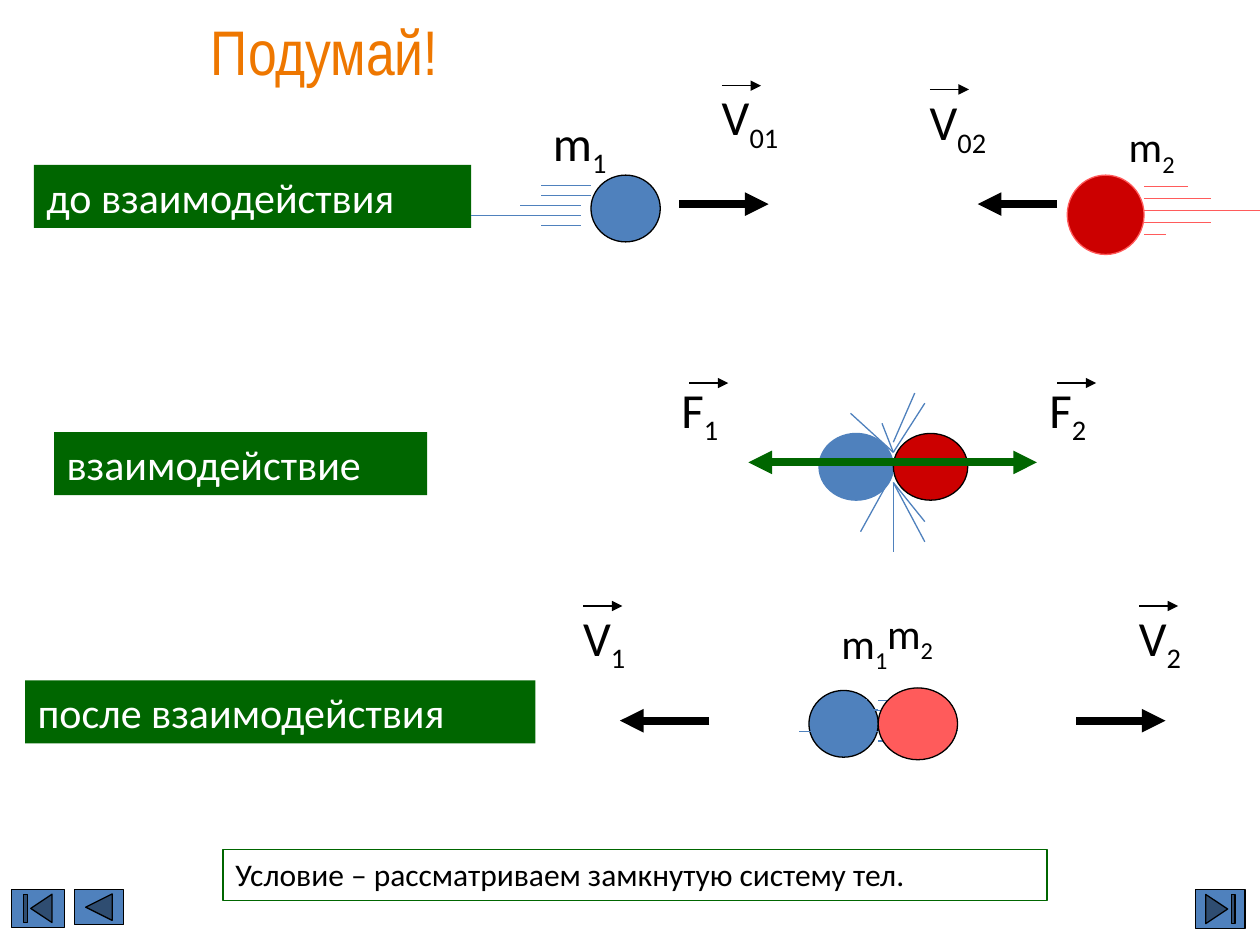
from lxml.etree import SubElement
from pptx import Presentation
from pptx.dml.color import RGBColor
from pptx.enum.shapes import MSO_CONNECTOR, MSO_SHAPE
from pptx.enum.text import PP_ALIGN
from pptx.oxml.ns import qn
from pptx.util import Inches, Pt

THEME = {
    "green": "006600", "blue": "4F81BD", "red": "CC0000", "pink": "FF5B5B",
    "black": "000000", "white": "FFFFFF", "orange": "EE7700",
    "body_font": "Calibri", "title_font": "Arial Narrow",
    "title": 36, "symbol": 28, "stage": 24, "note": 18,
    "thin": 0.75, "thick": 4.5,
}

TITLE = ("Подумай!", (0.27, 0.05, 4.61, 0.62))
CONDITION = ("Условие – рассматриваем замкнутую систему тел.", (1.77, 6.74, 6.54, 0.41))
STAGES = [
    ("до взаимодействия", (0.27, 1.31, 3.47, 0.5)),
    ("взаимодействие", (0.43, 3.43, 2.96, 0.5)),
    ("после взаимодействия", (0.2, 5.4, 4.05, 0.5)),
]

# letter, subscript, box, type size, left inset
MASSES = [
    ("m", "1", (4.29, 0.84, 0.97, 0.57), "symbol", 0.1),
    ("m", "2", (8.86, 0.91, 0.62, 0.5), "stage", 0.1),
    ("m", "1", (6.58, 4.85, 0.62, 0.5), "stage", 0.1),
    ("m", "2", (6.79, 4.77, 0.81, 0.5), "stage", 0.25),
]

# letter, subscript, label box, start of the small arrow above the letter
VECTORS = [
    ("V", "01", (5.63, 0.64, 0.76, 0.57), (5.73, 0.68)),
    ("V", "02", (7.28, 0.68, 0.76, 0.57), (7.38, 0.71)),
    ("F", "1", (5.31, 2.96, 0.59, 0.57), (5.47, 3.04)),
    ("F", "2", (8.23, 2.96, 0.59, 0.57), (8.39, 3.04)),
    ("V", "1", (4.53, 4.77, 0.61, 0.57), (4.63, 4.81)),
    ("V", "2", (8.94, 4.77, 0.61, 0.57), (9.04, 4.81)),
]
OVERLINE_LENGTH = 0.31

# start x, end x, y, colour
MOTION_ARROWS = [
    (5.39, 6.1, 1.62, "black"), (8.39, 7.76, 1.62, "black"),
    (7.05, 8.23, 3.67, "green"), (7.05, 5.94, 3.67, "green"),
    (5.63, 4.92, 5.72, "black"), (8.54, 9.25, 5.72, "black"),
]

# ball box, fill, outline, then colour, first y, step and x spans of speed lines
BEFORE = [
    ((4.69, 1.39, 0.55, 0.53), "blue", "black", "blue", 1.47, 0.08,
     [(4.69, 4.29), (4.69, 4.29), (4.61, 4.13), (4.61, 3.74), (4.61, 4.29)]),
    ((8.47, 1.39, 0.61, 0.63), "red", "pink", "pink", 1.48, 0.095,
     [(9.08, 9.43), (9.08, 9.61), (9.08, 10), (9.08, 9.61), (9.08, 9.25)]),
]
AFTER = [
    ((6.42, 5.48, 0.55, 0.53), "blue", "black", "blue", 5.56, 0.08,
     [(6.97, 7.2), (6.97, 7.44), (6.97, 7.36), (6.97, 7.6), (6.97, 7.28)]),
    ((6.97, 5.46, 0.63, 0.57), "pink", "black", "blue", 5.55, 0.085,
     [(6.88, 6.61), (6.97, 6.52), None, (6.97, 6.34), (6.88, 6.61)]),
]
COLLIDING = [
    ((6.5, 3.44, 0.59, 0.53), "blue", "blue"),
    ((7.09, 3.44, 0.59, 0.53), "red", "black"),
]
CONTACT_X = 7.09
# start y on the contact line, ends of the sparks that leave it
SPARKS = [
    (3.51, [(7.26, 3.12)]),
    (3.59, [(7.34, 3.2), (6.75, 3.28), (7, 3.36)]),
    (3.75, [(6.83, 4.22)]),
    (3.83, [(7.34, 4.14), (7.09, 4.38), (7.34, 4.3)]),
]

BUTTONS = [
    (MSO_SHAPE.ACTION_BUTTON_BEGINNING, (0.09, 7.06, 0.42, 0.3)),
    (MSO_SHAPE.ACTION_BUTTON_BACK_OR_PREVIOUS, (0.59, 7.06, 0.39, 0.28)),
    (MSO_SHAPE.ACTION_BUTTON_END, (9.49, 7.06, 0.39, 0.31)),
]


def color(name):
    return RGBColor.from_string(THEME[name])


def add_figure(slide, preset, box, fill=None, outline=None):
    figure = slide.shapes.add_shape(preset, *map(Inches, box))
    figure.shadow.inherit = False
    if fill:
        figure.fill.solid()
        figure.fill.fore_color.rgb = color(fill)
    else:
        figure.fill.background()
    if outline:
        figure.line.color.rgb = color(outline)
        figure.line.width = Pt(THEME["thin"])
    else:
        figure.line.fill.background()
    return figure


def write(holder, text, subscript="", size="stage", ink="black",
          font="body_font", align=PP_ALIGN.LEFT, inset=0.1):
    frame = holder.text_frame
    frame.word_wrap = True
    frame.margin_left = Inches(inset)
    frame.vertical_anchor = 1  # top
    paragraph = frame.paragraphs[0]
    paragraph.alignment = align
    for part, baseline in ((text, None), (subscript, "-25000")):
        if not part:
            continue
        run = paragraph.add_run()
        run.text = part
        run.font.size = Pt(THEME[size])
        run.font.name = THEME[font]
        run.font.color.rgb = color(ink)
        if baseline:
            run._r.get_or_add_rPr().set("baseline", baseline)


def add_label(slide, text, box, **text_format):
    write(slide.shapes.add_textbox(*map(Inches, box)), text, **text_format)


def add_line(slide, start, end, ink, weight="thin", arrow=False):
    line = slide.shapes.add_connector(
        MSO_CONNECTOR.STRAIGHT, *map(Inches, (*start, *end)))
    line.line.color.rgb = color(ink)
    line.line.width = Pt(THEME[weight])
    if arrow:
        SubElement(line.line._get_or_add_ln(), qn("a:tailEnd"), type="triangle")
    SubElement(line._element.spPr, qn("a:effectLst"))


def add_moving_ball(slide, box, fill, outline, ink, first_y, step, spans):
    add_figure(slide, MSO_SHAPE.OVAL, box, fill, outline)
    for row, span in enumerate(spans):
        if span:
            y = first_y + row * step
            add_line(slide, (span[0], y), (span[1], y), ink)


def build():
    deck = Presentation()
    deck.slide_width, deck.slide_height = Inches(10), Inches(7.5)
    slide = deck.slides.add_slide(deck.slide_layouts[6])

    for stage, box in STAGES:
        write(add_figure(slide, MSO_SHAPE.RECTANGLE, box, "green"), stage, ink="white")

    for ball in BEFORE:
        add_moving_ball(slide, *ball)
    for box, fill, outline in COLLIDING:
        add_figure(slide, MSO_SHAPE.OVAL, box, fill, outline)
    for start_y, ends in SPARKS:
        for end in ends:
            add_line(slide, (CONTACT_X, start_y), end, "blue")
    for ball in AFTER:
        add_moving_ball(slide, *ball)

    for letter, index, box, size, inset in MASSES:
        add_label(slide, letter, box, subscript=index, size=size, inset=inset)
    for letter, index, box, (x, y) in VECTORS:
        add_label(slide, letter, box, subscript=index, size="symbol")
        add_line(slide, (x, y), (x + OVERLINE_LENGTH, y), "black", arrow=True)
    for start_x, end_x, y, ink in MOTION_ARROWS:
        add_line(slide, (start_x, y), (end_x, y), ink, "thick", arrow=True)

    title, title_box = TITLE
    add_label(slide, title, title_box, size="title", ink="orange",
              font="title_font", align=PP_ALIGN.CENTER)
    condition, condition_box = CONDITION
    write(add_figure(slide, MSO_SHAPE.RECTANGLE, condition_box, outline="green"),
          condition, size="note")
    for preset, box in BUTTONS:
        add_figure(slide, preset, box, "blue", "black")

    deck.save("out.pptx")


if __name__ == "__main__":
    build()
